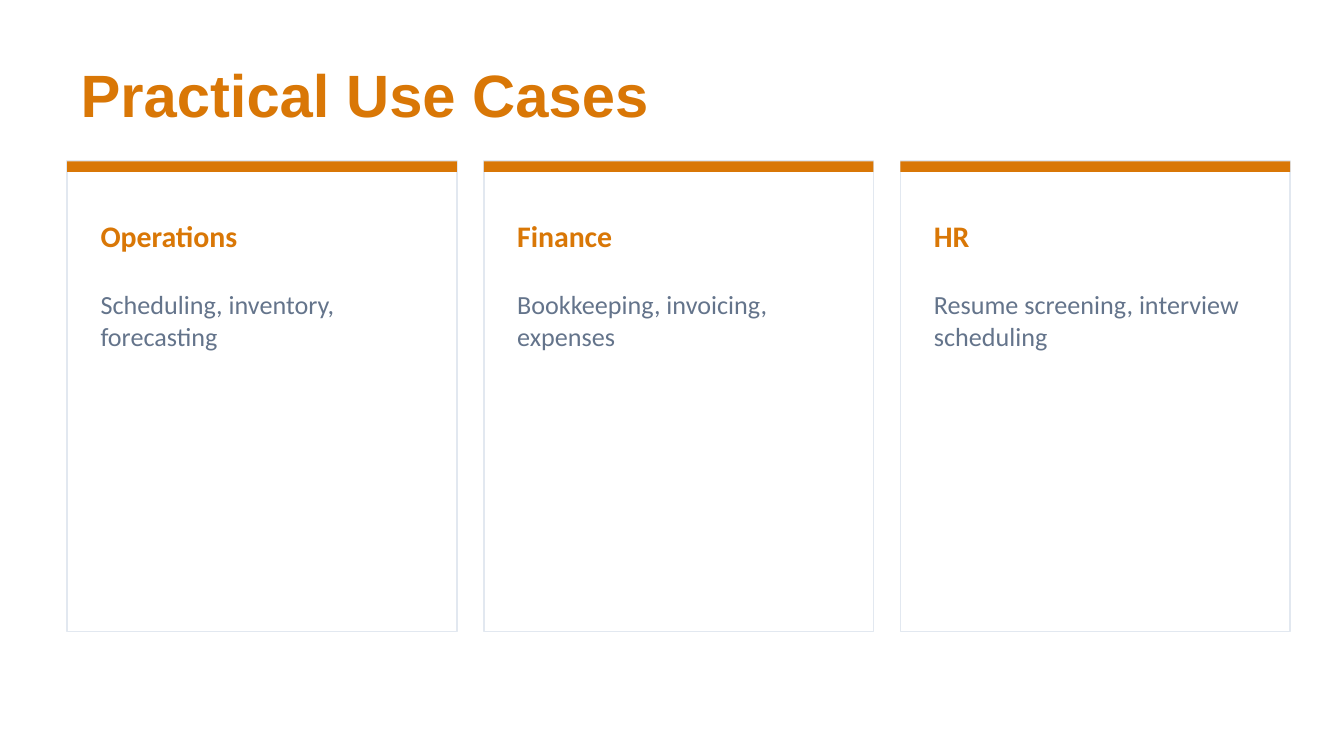
from dataclasses import dataclass

from pptx import Presentation
from pptx.dml.color import RGBColor
from pptx.enum.shapes import MSO_SHAPE as Shape
from pptx.enum.text import MSO_ANCHOR as Anchor, PP_ALIGN as Align
from pptx.util import Inches, Pt


@dataclass(frozen=True)
class Theme:
    accent: RGBColor = RGBColor(0xD9, 0x77, 0x06)
    muted: RGBColor = RGBColor(0x64, 0x74, 0x8B)
    border: RGBColor = RGBColor(0xE2, 0xE8, 0xF0)
    white: RGBColor = RGBColor(0xFF, 0xFF, 0xFF)
    title_font: str = "Arial"
    body_font: str = "Calibri"
    title_size: Pt = Pt(32)
    heading_size: Pt = Pt(16)
    body_size: Pt = Pt(14)


THEME = Theme()
TITLE_ONLY = 5
PAGE_WIDTH = 10
PAGE_HEIGHT = PAGE_WIDTH * 9 / 16
CARD_LEFT, CARD_TOP = 0.5, 1.2
CARD_WIDTH, CARD_HEIGHT = 2.9, 3.5
CARD_GAP = 0.2
BAR_HEIGHT = 0.08
TEXT_INSET = 0.15

USE_CASES = [
    ("Operations", "Scheduling, inventory, forecasting"),
    ("Finance", "Bookkeeping, invoicing, expenses"),
    ("HR", "Resume screening, interview scheduling"),
]


def write_text(box, text, font_name, size, color, bold=False, anchor=Anchor.MIDDLE):
    frame = box.text_frame
    frame.word_wrap = True
    frame.vertical_anchor = anchor
    para = frame.paragraphs[0]
    para.text = text
    para.alignment = Align.LEFT
    para.font.name = font_name
    para.font.size = size
    para.font.bold = bold
    para.font.color.rgb = color


def set_title(page, text):
    title = page.shapes.title
    title.left, title.top = Inches(0.5), Inches(0.4)
    title.width, title.height = Inches(9), Inches(0.6)
    write_text(title, text, THEME.title_font, THEME.title_size, THEME.accent, bold=True)


def add_panel(page, left, height, fill, border=None):
    """Add a card-wide rectangle at the card top, outlined if a border is given."""
    panel = page.shapes.add_shape(
        Shape.RECTANGLE, Inches(left), Inches(CARD_TOP), Inches(CARD_WIDTH), Inches(height)
    )
    panel.shadow.inherit = False
    panel.fill.solid()
    panel.fill.fore_color.rgb = fill
    if border is None:
        panel.line.fill.background()
    else:
        panel.line.color.rgb = border
        panel.line.width = Pt(1)


def add_card_text(page, left, top, height, text, size, color, **style):
    box = page.shapes.add_textbox(
        Inches(left + TEXT_INSET), Inches(top),
        Inches(CARD_WIDTH - 2 * TEXT_INSET), Inches(height),
    )
    write_text(box, text, THEME.body_font, size, color, **style)


def add_card(page, left, heading, body):
    add_panel(page, left, CARD_HEIGHT, THEME.white, THEME.border)
    add_panel(page, left, BAR_HEIGHT, THEME.accent)
    add_card_text(page, left, 1.5, 0.5, heading, THEME.heading_size, THEME.accent, bold=True)
    add_card_text(page, left, 2.1, 2.4, body, THEME.body_size, THEME.muted, anchor=Anchor.TOP)


def main():
    deck = Presentation()
    deck.slide_width, deck.slide_height = Inches(PAGE_WIDTH), Inches(PAGE_HEIGHT)
    page = deck.slides.add_slide(deck.slide_layouts[TITLE_ONLY])
    page.background.fill.solid()
    page.background.fill.fore_color.rgb = THEME.white

    set_title(page, "Practical Use Cases")
    for index, (heading, body) in enumerate(USE_CASES):
        add_card(page, CARD_LEFT + index * (CARD_WIDTH + CARD_GAP), heading, body)

    deck.save("out.pptx")


if __name__ == "__main__":
    main()
